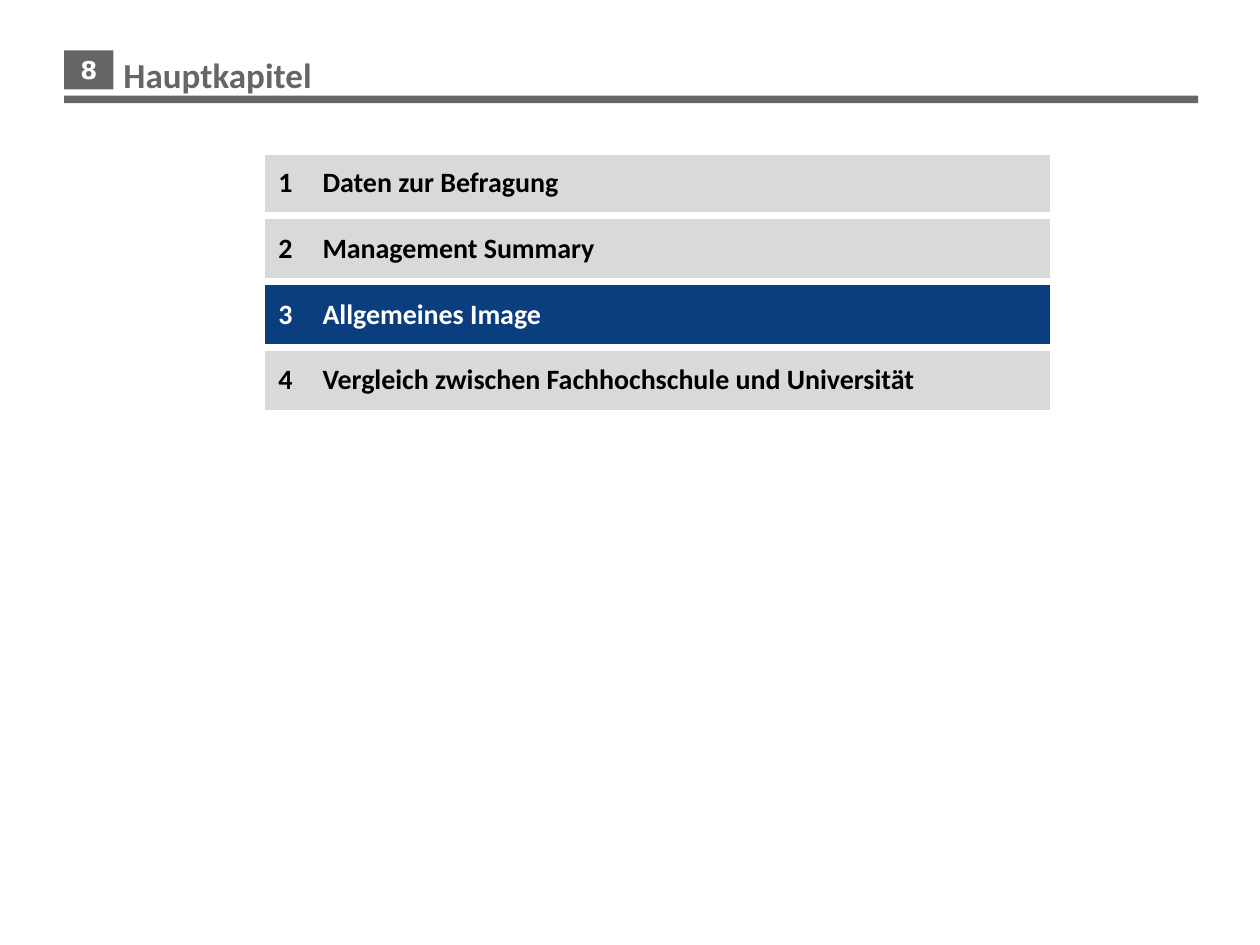
"""Build the chapter overview slide with its agenda table."""
import dataclasses

import pptx
import pptx.dml.color
import pptx.enum.shapes
import pptx.enum.text
import pptx.oxml
import pptx.oxml.ns
import pptx.util

Pt = pptx.util.Pt
Align = pptx.enum.text.PP_ALIGN
Middle = pptx.enum.text.MSO_ANCHOR.MIDDLE

COLORS = {"gray": "666666", "pale": "D9D9D9", "navy": "0B3E7F",
          "white": "FFFFFF", "black": "000000"}


@dataclasses.dataclass
class Bar:
    left: float
    top: float
    width: float
    height: float
    text: str = ""


@dataclasses.dataclass
class Topic:
    name: str
    active: bool = False


BARS = [Bar(36.72, 28.8, 28.08, 22.32, "8"), Bar(36.72, 54.72, 648, 4.32)]
TOPICS = [Topic("Daten zur Befragung"), Topic("Management Summary"),
          Topic("Allgemeines Image", active=True),
          Topic("Vergleich zwischen Fachhochschule und Universität")]
WIDTHS = [28.08, 425.52]
ROW = 37.62


def color(name: str) -> pptx.dml.color.RGBColor:
    return pptx.dml.color.RGBColor.from_string(COLORS[name])


def write(frame, text: str, *, size: float, tint: str, font: str = "Calibri",
          align=Align.LEFT) -> None:
    frame.text = text
    para = frame.paragraphs[0]
    para.alignment = align
    para.space_before = Pt(0)
    face = para.runs[0].font
    face.name, face.size, face.bold = font, Pt(size), True
    face.color.rgb = color(tint)


def draw_bar(slide, bar: Bar) -> None:
    shape = slide.shapes.add_shape(
        pptx.enum.shapes.MSO_SHAPE.RECTANGLE,
        Pt(bar.left), Pt(bar.top), Pt(bar.width), Pt(bar.height))
    shape.shadow.inherit = False
    shape.fill.solid()
    shape.fill.fore_color.rgb = color("gray")
    shape.line.fill.background()
    if bar.text:
        frame = shape.text_frame
        frame.word_wrap = False
        frame.vertical_anchor = Middle
        write(frame, bar.text, size=14, tint="white", font="DejaVu Sans",
              align=Align.CENTER)


def set_edge(cell, side: str, width: float) -> None:
    paint = (f'<a:solidFill><a:srgbClr val="{COLORS["white"]}"/></a:solidFill>'
             if width else "<a:noFill/>")
    space = pptx.oxml.ns.nsdecls("a")
    cell._tc.get_or_add_tcPr().append(pptx.oxml.parse_xml(
        f'<a:ln{side} {space} w="{Pt(width)}">{paint}</a:ln{side}>'))


def draw_cell(cell, text: str, topic: Topic, row: int, col: int) -> None:
    edges = {"L": 0 if col else 6, "R": 6 if col else 0,
             "T": 4.5 if row else 6, "B": 4.5}
    for side, width in edges.items():
        set_edge(cell, side, width)
    cell.fill.solid()
    cell.fill.fore_color.rgb = color("navy" if topic.active else "pale")
    cell.vertical_anchor = Middle
    cell.margin_left = cell.margin_right = Pt(7.2)
    cell.margin_top = cell.margin_bottom = Pt(5.76)
    write(cell.text_frame, text, size=16,
          tint="white" if topic.active else "black",
          align=Align.LEFT if col else Align.CENTER)


def draw_table(slide, topics: list[Topic]) -> None:
    table = slide.shapes.add_table(
        len(topics), len(WIDTHS), Pt(149.04), Pt(85.68),
        Pt(sum(WIDTHS)), Pt(ROW * len(topics))).table
    table.first_row = table.horz_banding = False
    for col, width in enumerate(WIDTHS):
        table.columns[col].width = Pt(width)
    for row, topic in enumerate(topics):
        table.rows[row].height = Pt(ROW)
        for col, text in enumerate((str(row + 1), topic.name)):
            draw_cell(table.cell(row, col), text, topic, row, col)


def draw_title(slide, text: str) -> None:
    title = slide.shapes.title
    title.left, title.top = Pt(63.36), Pt(25.92)
    title.width, title.height = Pt(624.24), Pt(33.84)
    title.text_frame.vertical_anchor = Middle
    write(title.text_frame, text, size=20, tint="gray")


def main() -> None:
    deck = pptx.Presentation()
    deck.slide_width, deck.slide_height = Pt(720), Pt(540)
    slide = deck.slides.add_slide(deck.slide_layouts[5])
    for bar in BARS:
        draw_bar(slide, bar)
    draw_table(slide, TOPICS)
    draw_title(slide, "Hauptkapitel")
    deck.save("out.pptx")


if __name__ == "__main__":
    main()
